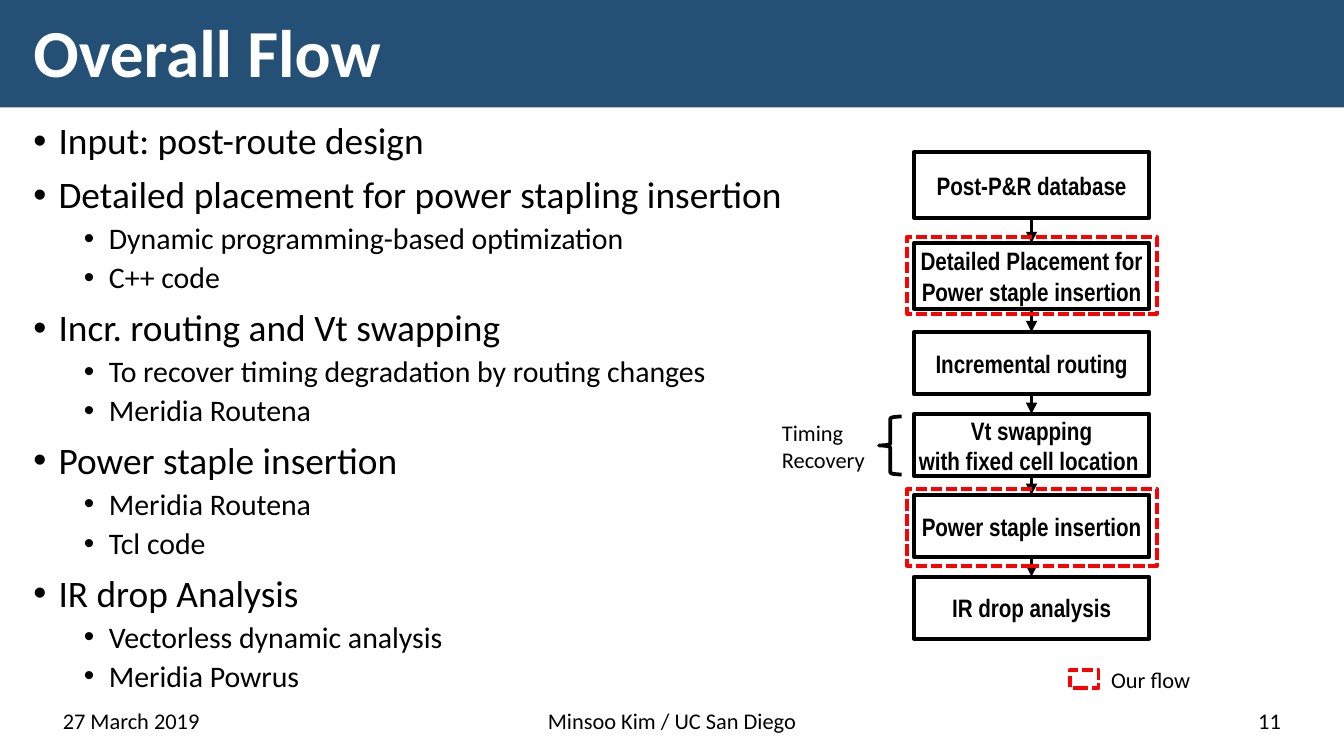
"""Build the Overall Flow slide: a bullet outline beside a flowchart."""
import lxml.etree
import pptx
import pptx.dml.color
import pptx.enum.dml
import pptx.enum.shapes
import pptx.enum.text
import pptx.oxml.ns
import pptx.util

Pt = pptx.util.Pt
qn = pptx.oxml.ns.qn
ALIGN = pptx.enum.text.PP_ALIGN
ANCHOR = pptx.enum.text.MSO_ANCHOR
SHAPE = pptx.enum.shapes.MSO_SHAPE

COLORS = {"band": "255076", "text": "000000", "title": "FFFFFF", "ours": "FF0000"}
BODY_FONT = "Calibri"
FLOW_FONT = "Arial Narrow"
FLOW_LEFT, FLOW_WIDTH = 489.6, 126

OUTLINE = [
    ("Input: post-route design", []),
    ("Detailed placement for power stapling insertion",
     ["Dynamic programming-based optimization", "C++ code"]),
    ("Incr. routing and Vt swapping",
     ["To recover timing degradation by routing changes", "Meridia Routena"]),
    ("Power staple insertion", ["Meridia Routena", "Tcl code"]),
    ("IR drop Analysis", ["Vectorless dynamic analysis", "Meridia Powrus"]),
]

STEPS = [
    (81.5, 35.2, ["Post-P&R database"]),
    (130.2, 35.2, ["Detailed Placement for", "Power staple insertion"]),
    (178, 33.2, ["Incremental routing"]),
    (221.8, 33.2, ["Vt swapping", "with fixed cell location "]),
    (265.2, 33.2, ["Power staple insertion"]),
    (309, 33.2, ["IR drop analysis"]),
]

OUR_FRAMES = [
    (486, 126.9, 133.9, 41.2),
    (486, 262, 133.9, 41.2),
    (573.1, 358.8, 15.4, 9.9),
]


def rgb(name):
    return pptx.dml.color.RGBColor.from_string(COLORS[name])


def style_font(paragraph, size, color="text", face=BODY_FONT, bold=False):
    font = paragraph.font
    font.size, font.name, font.bold = Pt(size), face, bold
    font.color.rgb = rgb(color)


def write_lines(frame, lines, align, **font):
    for index, line in enumerate(lines):
        paragraph = frame.add_paragraph() if index else frame.paragraphs[0]
        paragraph.text = line
        paragraph.alignment = align
        style_font(paragraph, **font)


def add_text(slide, box, text, size=12, align=ALIGN.LEFT, anchor=ANCHOR.TOP, **font):
    frame = slide.shapes.add_textbox(*map(Pt, box)).text_frame
    frame.word_wrap = True
    frame.vertical_anchor = anchor
    write_lines(frame, [text], align, size=size, **font)
    return frame


def add_outlined(slide, kind, box, color="text", dashed=False):
    shape = slide.shapes.add_shape(kind, *map(Pt, box))
    shape.shadow.inherit = False
    shape.fill.background()
    shape.line.color.rgb = rgb(color)
    shape.line.width = Pt(2)
    if dashed:
        shape.line.dash_style = pptx.enum.dml.MSO_LINE.SQUARE_DOT
    return shape


def add_step(slide, top, height, lines):
    box = (FLOW_LEFT, top, FLOW_WIDTH, height)
    frame = add_outlined(slide, SHAPE.RECTANGLE, box).text_frame
    frame.word_wrap = False
    frame.vertical_anchor = ANCHOR.MIDDLE
    frame.margin_left = frame.margin_right = Pt(5)
    frame.margin_top = frame.margin_bottom = Pt(2.7)
    write_lines(frame, lines, ALIGN.CENTER, size=13.5, face=FLOW_FONT, bold=True)


def add_arrow(slide, start, end):
    center = Pt(FLOW_LEFT + FLOW_WIDTH / 2)
    arrow = slide.shapes.add_connector(
        pptx.enum.shapes.MSO_CONNECTOR.STRAIGHT, center, Pt(start), center, Pt(end))
    arrow.line.color.rgb = rgb("text")
    arrow.line.width = Pt(2)
    properties = arrow.element.spPr
    lxml.etree.SubElement(properties.find(qn("a:ln")), qn("a:tailEnd"), type="triangle")
    lxml.etree.SubElement(properties, qn("a:effectLst"))


def add_bullet(paragraph, text, level):
    paragraph.text = text
    paragraph.level = level
    paragraph.line_spacing = 0.9
    paragraph.space_before = Pt((7.5, 3.75)[level])
    properties = paragraph._p.get_or_add_pPr()
    properties.set("marL", str(Pt((13.5, 40.5)[level])))
    properties.set("indent", str(Pt(-13.5)))
    lxml.etree.SubElement(properties, qn("a:buFont"), typeface="Arial")
    lxml.etree.SubElement(properties, qn("a:buChar"), char="•")
    style_font(paragraph, (20, 16)[level])


def add_outline(slide):
    frame = slide.shapes.add_textbox(Pt(10.8), Pt(62), Pt(698.4), Pt(322.5)).text_frame
    frame.word_wrap = True
    items = [item for heading, details in OUTLINE
             for item in [(heading, 0)] + [(detail, 1) for detail in details]]
    for index, (text, level) in enumerate(items):
        paragraph = frame.add_paragraph() if index else frame.paragraphs[0]
        add_bullet(paragraph, text, level)


def add_header(slide):
    band = slide.shapes.add_shape(SHAPE.RECTANGLE, 0, 0, Pt(720), Pt(57.6))
    band.shadow.inherit = False
    band.fill.solid()
    band.fill.fore_color.rgb = rgb("band")
    band.line.fill.background()
    frame = add_text(slide, (10.8, 7.2, 698.4, 45.4), "Overall Flow", 36,
                     anchor=ANCHOR.MIDDLE, color="title", bold=True)
    frame.word_wrap = False
    frame.paragraphs[0].line_spacing = 0.9


def add_footer(slide):
    for left, width, text, align in [
        (26.6, 185, "27 March 2019", ALIGN.LEFT),
        (238.3, 243.4, "Minsoo Kim / UC San Diego", ALIGN.CENTER),
        (508.3, 185, "11", ALIGN.RIGHT),
    ]:
        add_text(slide, (left, 375.1, width, 21.6), text, align=align, anchor=ANCHOR.BOTTOM)


def add_flowchart(slide):
    for step in STEPS:
        add_step(slide, *step)
    for (top, height, _), (next_top, _, _) in zip(STEPS, STEPS[1:]):
        add_arrow(slide, top + height, next_top)
    for box in OUR_FRAMES:
        add_outlined(slide, SHAPE.RECTANGLE, box, "ours", dashed=True)
    add_outlined(slide, SHAPE.LEFT_BRACE, (470.9, 223.2, 12.2, 31))
    add_text(slide, (411.8, 221, 65.5, 36), "Timing Recovery")
    add_text(slide, (588.2, 353.5, 66.2, 21.6), "Our flow")


def main():
    presentation = pptx.Presentation()
    presentation.slide_width, presentation.slide_height = Pt(720), Pt(405)
    slide = presentation.slides.add_slide(presentation.slide_layouts[6])
    add_header(slide)
    add_outline(slide)
    add_footer(slide)
    add_flowchart(slide)
    presentation.save("out.pptx")


if __name__ == "__main__":
    main()
